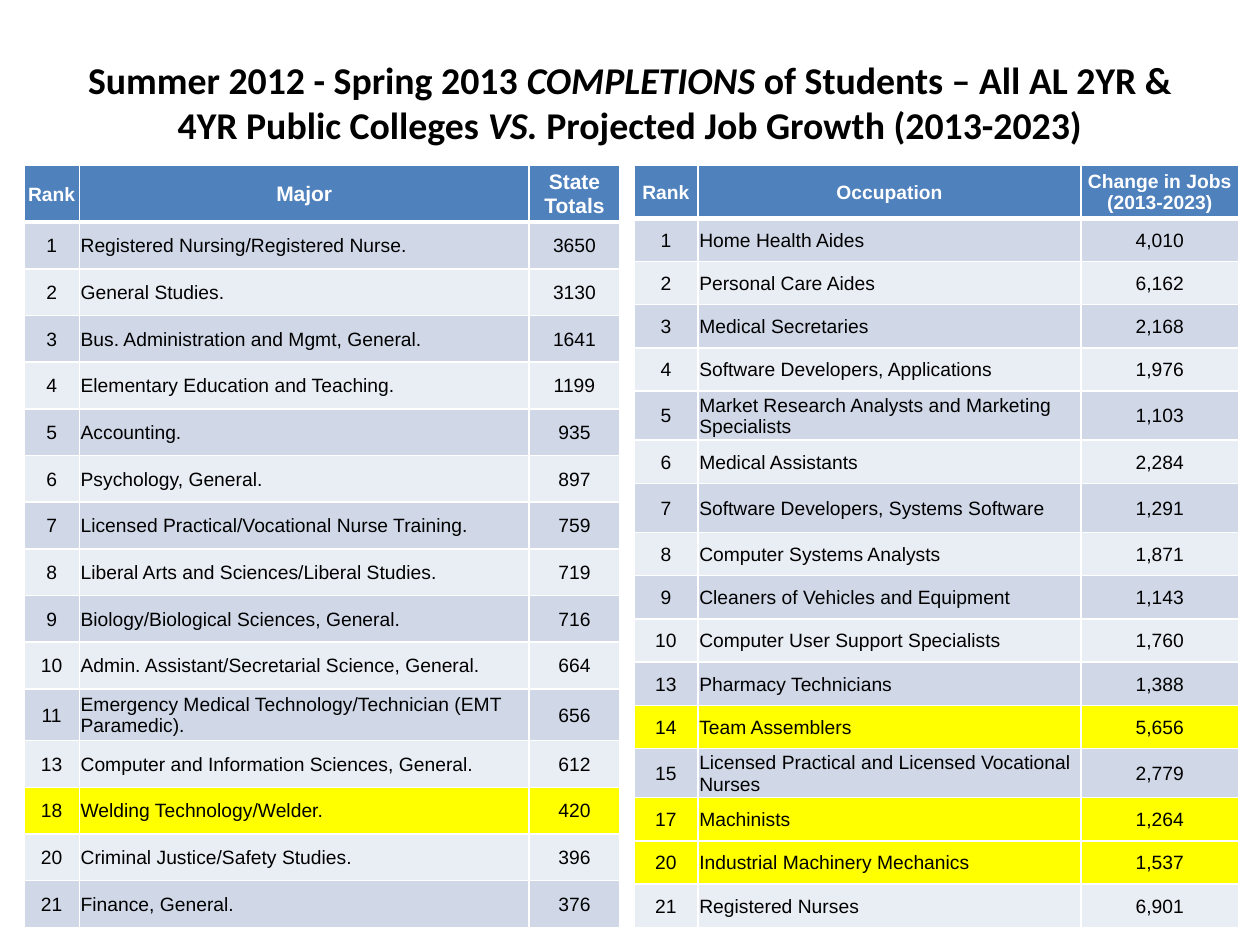
from dataclasses import dataclass

from lxml.etree import SubElement
from pptx import Presentation
from pptx.dml.color import RGBColor
from pptx.enum.text import MSO_ANCHOR, PP_ALIGN
from pptx.oxml.ns import qn
from pptx.table import _Cell
from pptx.util import Inches, Pt

WHITE = RGBColor(0xFF, 0xFF, 0xFF)
BLACK = RGBColor(0x00, 0x00, 0x00)
HEADER = RGBColor(0x4F, 0x81, 0xBD)
BANDS = (RGBColor(0xE9, 0xED, 0xF4), RGBColor(0xD0, 0xD8, 0xE8))
HIGHLIGHT = RGBColor(0xFF, 0xFF, 0x00)

W, H = Inches(10), Inches(7.5)
TABLE_TOP, TABLE_HEIGHT = 17.5, 80.67


@dataclass
class Ranking:
    left: float
    cols: tuple[float, ...]
    header_height: float
    tall_height: float
    tall_rows: set[int]
    highlights: set[int]
    header: tuple[str, ...]
    header_sizes: tuple[int, ...]
    rows: list[tuple[str, str, str]]


OCCUPATIONS = Ranking(
    50.3, (5.1, 30.4, 12.5), 5.6, 5.2, {5, 7, 13}, {12, 14, 15},
    ("Rank", "Occupation", "Change in Jobs (2013-2023)"), (11, 11, 11),
    [
        ("1", "Home Health Aides", "4,010"),
        ("2", "Personal Care Aides", "6,162"),
        ("3", "Medical Secretaries", "2,168"),
        ("4", "Software Developers, Applications", "1,976"),
        ("5", "Market Research Analysts and Marketing Specialists", "1,103"),
        ("6", "Medical Assistants", "2,284"),
        ("7", "Software Developers, Systems Software", "1,291"),
        ("8", "Computer Systems Analysts", "1,871"),
        ("9", "Cleaners of Vehicles and Equipment", "1,143"),
        ("10", "Computer User Support Specialists", "1,760"),
        ("13", "Pharmacy Technicians", "1,388"),
        ("14", "Team Assemblers", "5,656"),
        ("15", "Licensed Practical and Licensed Vocational Nurses", "2,779"),
        ("17", "Machinists", "1,264"),
        ("20", "Industrial Machinery Mechanics", "1,537"),
        ("21", "Registered Nurses", "6,901"),
    ],
)

MAJORS = Ranking(
    1.9, (4.4, 35.7, 7.2), 6, 5.47, {11}, {13},
    ("Rank", "Major", "State Totals"), (11, 12, 12),
    [
        ("1", "Registered Nursing/Registered Nurse.", "3650"),
        ("2", "General Studies.", "3130"),
        ("3", "Bus. Administration and Mgmt, General.", "1641"),
        ("4", "Elementary Education and Teaching.", "1199"),
        ("5", "Accounting.", "935"),
        ("6", "Psychology, General.", "897"),
        ("7", "Licensed Practical/Vocational Nurse Training.", "759"),
        ("8", "Liberal Arts and Sciences/Liberal Studies.", "719"),
        ("9", "Biology/Biological Sciences, General.", "716"),
        ("10", "Admin. Assistant/Secretarial Science, General.", "664"),
        ("11", "Emergency Medical Technology/Technician (EMT Paramedic).", "656"),
        ("13", "Computer and Information Sciences, General.", "612"),
        ("18", "Welding Technology/Welder.", "420"),
        ("20", "Criminal Justice/Safety Studies.", "396"),
        ("21", "Finance, General.", "376"),
    ],
)

TITLE = [
    ("Summer 2012 - Spring 2013 ", False),
    ("COMPLETIONS", True),
    (" of Students – All AL 2YR & 4YR Public Colleges ", False),
    ("VS.", True),
    (" Projected Job Growth (2013-2023)", False),
]


def across(percent: float) -> int:
    return round(W * percent / 100)


def down(percent: float) -> int:
    return round(H * percent / 100)


def set_borders(cell: _Cell, top: float, bottom: float) -> None:
    tc_pr = cell._tc.get_or_add_tcPr()
    for tag, width in (("a:lnL", 1), ("a:lnR", 1), ("a:lnT", top), ("a:lnB", bottom)):
        ln = SubElement(tc_pr, qn(tag), w=str(Pt(width)))
        fill = SubElement(ln, qn("a:solidFill"))
        SubElement(fill, qn("a:srgbClr"), val=str(WHITE))


def fill_cell(cell: _Cell, text: str, size: int, fill: RGBColor,
              align: PP_ALIGN, header: bool) -> None:
    cell.fill.solid()
    cell.fill.fore_color.rgb = fill
    cell.vertical_anchor = MSO_ANCHOR.MIDDLE
    cell.margin_left = cell.margin_top = cell.margin_right = Inches(0.01)
    cell.margin_bottom = 0
    p = cell.text_frame.paragraphs[0]
    p.alignment = align
    r = p.add_run()
    r.text = text
    r.font.name = "Arial"
    r.font.size = Pt(size)
    r.font.bold = header
    r.font.color.rgb = WHITE if header else BLACK


def add_ranking(s, ranking: Ranking) -> None:
    rows = [ranking.header, *ranking.rows]
    tall = len(ranking.tall_rows)
    body = TABLE_HEIGHT - ranking.header_height - tall * ranking.tall_height
    normal = body / (len(ranking.rows) - tall)
    table = s.shapes.add_table(
        len(rows), len(ranking.cols), across(ranking.left), down(TABLE_TOP),
        across(sum(ranking.cols)), down(TABLE_HEIGHT)).table
    for column, width in zip(table.columns, ranking.cols):
        column.width = across(width)
    for i, texts in enumerate(rows):
        header = i == 0
        if header:
            height, fill = ranking.header_height, HEADER
        else:
            height = ranking.tall_height if i in ranking.tall_rows else normal
            fill = HIGHLIGHT if i in ranking.highlights else BANDS[i % 2]
        table.rows[i].height = down(height)
        for j, text in enumerate(texts):
            cell = table.cell(i, j)
            set_borders(cell, 3 if i == 1 else 1, 3 if header else 1)
            size = ranking.header_sizes[j] if header else 11
            align = PP_ALIGN.LEFT if j == 1 and not header else PP_ALIGN.CENTER
            fill_cell(cell, text, size, fill, align, header)


def add_title(s) -> None:
    tf = s.shapes.add_textbox(across(5), down(4), across(90), down(13.5)).text_frame
    tf.word_wrap = True
    tf.vertical_anchor = MSO_ANCHOR.MIDDLE
    p = tf.paragraphs[0]
    p.alignment = PP_ALIGN.CENTER
    for text, italic in TITLE:
        r = p.add_run()
        r.text = text
        r.font.name = "Calibri"
        r.font.size = Pt(21.6)
        r.font.bold = True
        r.font.italic = italic
        r.font.color.rgb = BLACK


def main() -> None:
    prs = Presentation()
    prs.slide_width, prs.slide_height = W, H
    s = prs.slides.add_slide(prs.slide_layouts[6])
    add_title(s)
    for ranking in (OCCUPATIONS, MAJORS):
        add_ranking(s, ranking)
    prs.save("out.pptx")


if __name__ == "__main__":
    main()
